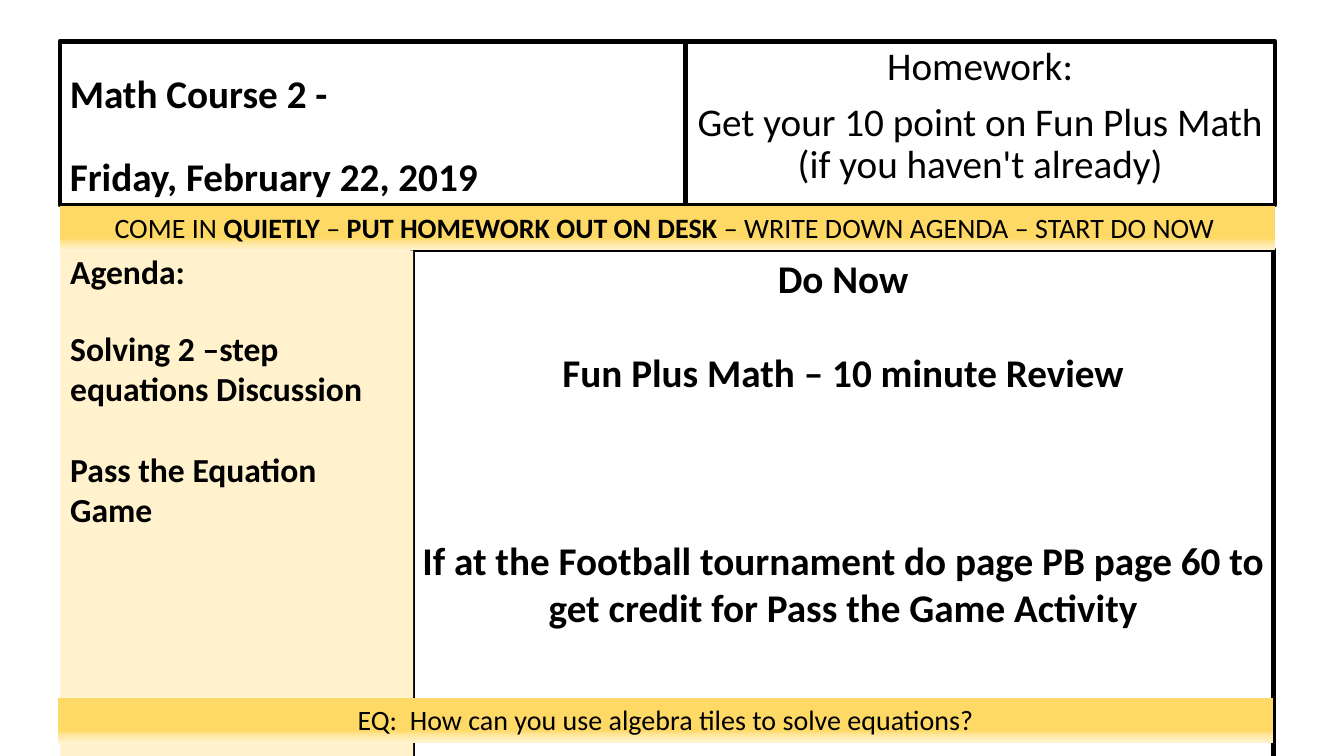
from lxml.etree import SubElement
from pptx import Presentation
from pptx.dml.color import RGBColor
from pptx.enum.shapes import MSO_SHAPE
from pptx.enum.text import MSO_ANCHOR, PP_ALIGN
from pptx.oxml.ns import qn
from pptx.util import Cm, Pt

FONT = "Calibri"
BLACK, CREAM = "000000", "FFF2CC"
BAR_STOPS = [(0, "FFD966"), (74, "FFD966"), (83, "FFE699"), (100, CREAM)]
LEFT, WIDTH = 1.51, 30.63
BAR_HEIGHT = 1.12


def color(hex_code):
    return RGBColor.from_string(hex_code)


def add_box(slide, left, top, width, height, fill=None, border=None):
    box = slide.shapes.add_shape(
        MSO_SHAPE.RECTANGLE, Cm(left), Cm(top), Cm(width), Cm(height))
    box.shadow.inherit = False
    if fill:
        box.fill.solid()
        box.fill.fore_color.rgb = color(fill)
    else:
        box.fill.background()
    if border:
        box.line.color.rgb = color(BLACK)
        box.line.width = Pt(border)
    else:
        box.line.fill.background()
    return box


def write(box, paragraphs, size=28, bold=False, align=PP_ALIGN.CENTER,
          anchor=MSO_ANCHOR.TOP):
    """Each paragraph is (runs, space before, line spacing); a run is (text, bold) or text."""
    frame = box.text_frame
    frame.word_wrap = True
    frame.vertical_anchor = anchor
    for i, (runs, gap, spacing) in enumerate(paragraphs):
        paragraph = frame.paragraphs[0] if i == 0 else frame.add_paragraph()
        paragraph.alignment = align
        paragraph.space_before = Pt(gap)
        paragraph.line_spacing = spacing
        for part in [runs] if isinstance(runs, str) else runs:
            text, strong = (part, bold) if isinstance(part, str) else part
            run = paragraph.add_run()
            run.text = text
            run.font.name = FONT
            run.font.size = Pt(size)
            run.font.bold = strong
            run.font.color.rgb = color(BLACK)


def add_bar(slide, left, top, runs):
    bar = add_box(slide, left, top, WIDTH, BAR_HEIGHT)
    bar.fill.gradient()
    bar.fill.gradient_angle = 270
    # Four stops fading at the lower edge
    stops = bar.fill._xPr.find(qn("a:gradFill")).find(qn("a:gsLst"))
    for stop in list(stops):
        stops.remove(stop)
    for percent, hex_code in BAR_STOPS:
        stop = SubElement(stops, qn("a:gs"), pos=str(percent * 1000))
        SubElement(stop, qn("a:srgbClr"), val=hex_code)
    write(bar, [(runs, 0, 1)], size=20)


def main():
    deck = Presentation()
    deck.slide_width, deck.slide_height = Cm(33.87), Cm(19.05)
    slide = deck.slides.add_slide(deck.slide_layouts[6])

    # Course and date
    course = add_box(slide, LEFT, 1.04, 15.76, 4.13, border=3.25)
    write(course, [("Math Course 2 -", 0, 0.9),
                   ("Friday, February 22, 2019", 29.5, 0.9)],
          bold=True, align=PP_ALIGN.LEFT, anchor=MSO_ANCHOR.BOTTOM)

    # Homework
    homework = add_box(slide, 17.27, 1.04, 14.86, 4.13, border=3.25)
    write(homework, [
        ("Homework:", 0, 0.9),
        ("Get your 10 point on Fun Plus Math (if you haven't already)", 10, 0.9)])

    # Do Now
    do_now = add_box(slide, 10.39, 6.29, 21.71, 19.4, border=3.25)
    write(do_now, [
        ("Do Now", 0, 1),
        ("Fun Plus Math – 10 minute Review", 33.5, 1),
        ("If at the Football tournament do page PB page 60 to get credit "
         "for Pass the Game Activity", 100.5, 1)], bold=True)

    # Entry routine
    add_bar(slide, LEFT, 5.18, [
        "COME IN ", ("QUIETLY", True), " – ",
        ("PUT HOMEWORK OUT ON DESK", True),
        " – WRITE DOWN AGENDA – START DO NOW\u00a0"])

    # Agenda
    agenda = add_box(slide, 1.52, 6.31, 8.89, 15.29, fill=CREAM)
    write(agenda, [("Agenda:", 0, 0.9),
                   ("Solving 2 –step equations Discussion", 25.8, 1),
                   ("Pass the Equation Game", 29, 1)],
          size=24, bold=True, align=PP_ALIGN.LEFT)

    # Essential question
    add_bar(slide, 1.46, 17.58,
            ["EQ:\u00a0 How can you use algebra tiles to solve equations?"])

    deck.save("out.pptx")


if __name__ == "__main__":
    main()
